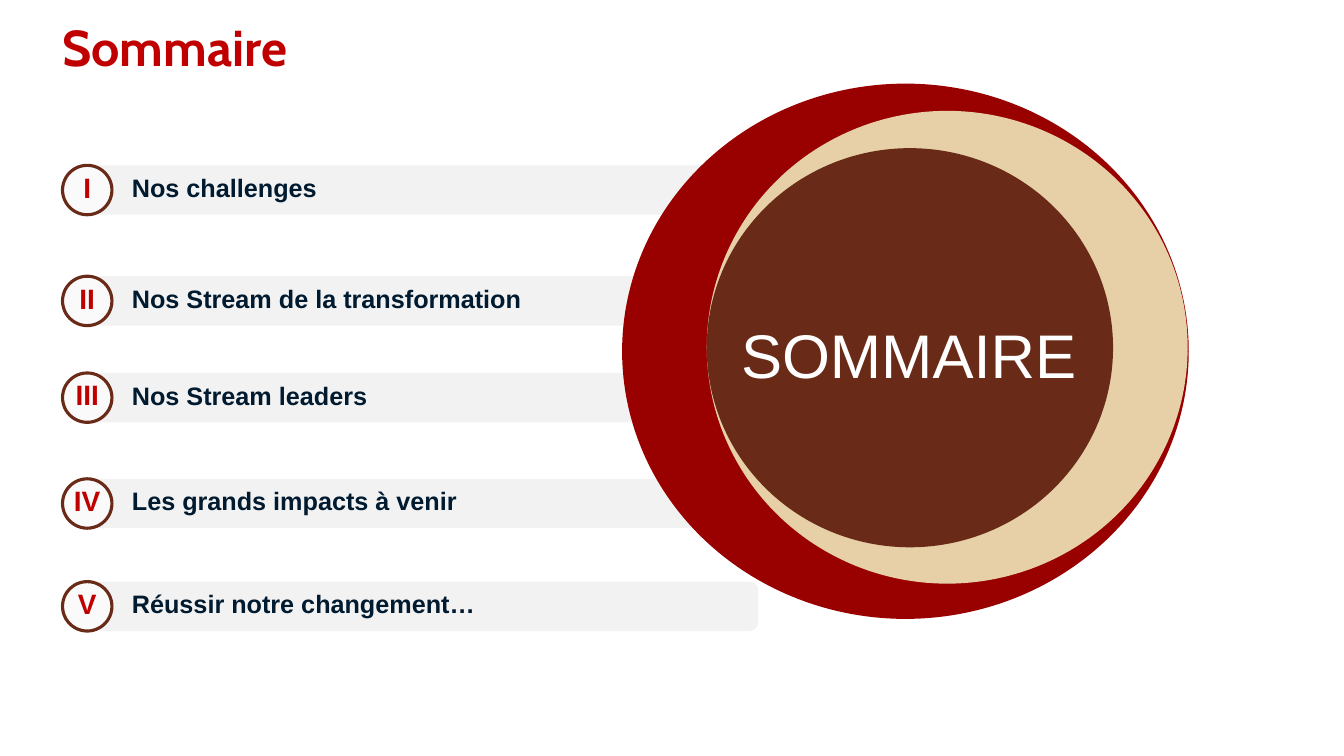
from pptx import Presentation
from pptx.dml.color import RGBColor
from pptx.enum.shapes import MSO_SHAPE as Shape
from pptx.enum.text import MSO_ANCHOR as Anchor, PP_ALIGN as Align
from pptx.util import Inches, Pt

RED = RGBColor(0xC0, 0x00, 0x00)
DARK_RED = RGBColor(0x99, 0x00, 0x00)
SAND = RGBColor(0xE7, 0xD0, 0xA7)
BROWN = RGBColor(0x69, 0x2B, 0x17)
NAVY = RGBColor(0x00, 0x1A, 0x30)
GREY = RGBColor(0xF2, 0xF2, 0xF2)
PALE = RGBColor(0xFA, 0xFA, 0xFA)
WHITE = RGBColor(0xFF, 0xFF, 0xFF)

CHAPTERS = [
    ("I", "Nos challenges", 1.64),
    ("II", "Nos Stream de la transformation", 2.74),
    ("III", "Nos Stream leaders", 3.7),
    ("IV", "Les grands impacts à venir", 4.75),
    ("V", "Réussir notre changement…", 5.77),
]
DISCS = [
    (6.17, 0.83, 5.62, 5.31, DARK_RED),
    (7.01, 1.1, 4.77, 4.69, SAND),
    (7.01, 1.47, 4.03, 3.96, BROWN),
]


class SummarySlide:
    body_font = "Arial"
    title_font = "Cabin"

    def __init__(self, presentation):
        self.slide = presentation.slides.add_slide(presentation.slide_layouts[6])

    def shape(self, kind, left, top, width, height, fill, outline=None):
        shape = self.slide.shapes.add_shape(
            kind, Inches(left), Inches(top), Inches(width), Inches(height))
        shape.shadow.inherit = False
        shape.fill.solid()
        shape.fill.fore_color.rgb = fill
        if outline is None:
            shape.line.fill.background()
        else:
            shape.line.color.rgb = outline
            shape.line.width = Pt(2.25)

    def text(self, words, left, top, width, height, size, color, font=body_font,
             bold=True, align=Align.LEFT, anchor=Anchor.TOP):
        box = self.slide.shapes.add_textbox(
            Inches(left), Inches(top), Inches(width), Inches(height))
        frame = box.text_frame
        frame.word_wrap = True
        frame.vertical_anchor = anchor
        paragraph = frame.paragraphs[0]
        paragraph.text = words
        paragraph.alignment = align
        paragraph.font.name = font
        paragraph.font.size = Pt(size)
        paragraph.font.bold = bold
        paragraph.font.color.rgb = color

    def title(self, words):
        self.text(words, 0.52, 0.08, 11.91, 0.76, 36, RED,
                  font=self.title_font, anchor=Anchor.MIDDLE)

    def chapter(self, numeral, heading, top):
        self.shape(Shape.ROUNDED_RECTANGLE, 0.92, top, 6.6, 0.49, GREY)
        self.shape(Shape.OVAL, 0.62, top, 0.49, 0.49, PALE, BROWN)
        self.text(heading, 1.21, top + 0.02, 5.81, 0.4, 18, NAVY)
        self.text(numeral, 0.35, top, 1.03, 0.44, 20, RED, align=Align.CENTER)

    def emblem(self, words):
        for left, top, width, height, fill in DISCS:
            self.shape(Shape.OVAL, left, top, width, height, fill)
        self.text(words, 7.23, 3.09, 3.57, 0.84, 44, WHITE,
                  bold=False, align=Align.CENTER)


def main():
    presentation = Presentation()
    presentation.slide_width = Inches(13.33)
    presentation.slide_height = Inches(7.5)
    summary = SummarySlide(presentation)
    summary.title("Sommaire")
    for chapter in CHAPTERS[:-1]:
        summary.chapter(*chapter)
    summary.emblem("SOMMAIRE")
    summary.chapter(*CHAPTERS[-1])
    presentation.save("out.pptx")


if __name__ == "__main__":
    main()
